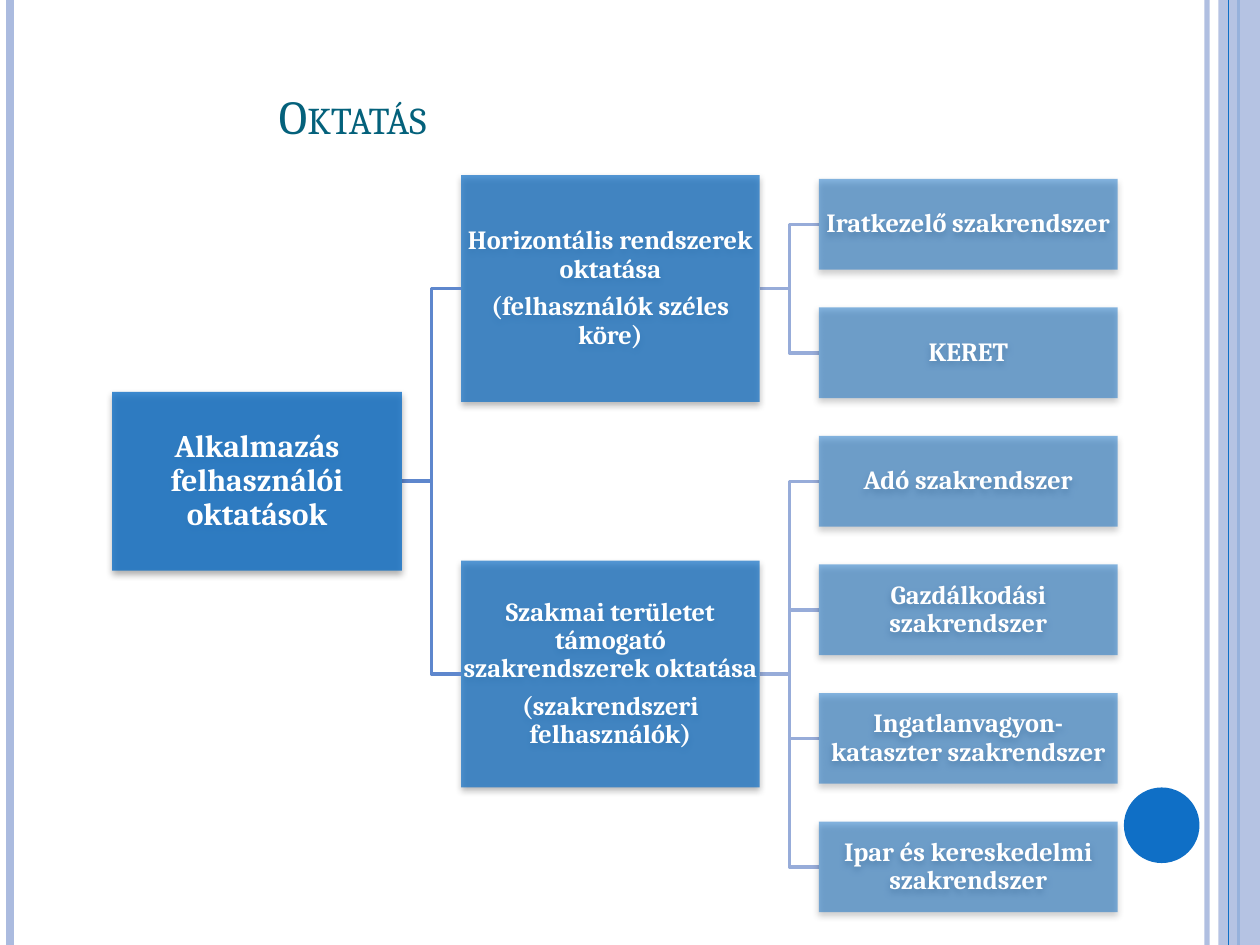
from lxml import etree
from pptx import Presentation
from pptx.dml.color import RGBColor
from pptx.enum.shapes import MSO_CONNECTOR, MSO_SHAPE
from pptx.enum.text import MSO_ANCHOR, PP_ALIGN
from pptx.oxml.ns import qn
from pptx.util import Inches, Pt

STRAIGHT = MSO_CONNECTOR.STRAIGHT
RECTANGLE, OVAL = MSO_SHAPE.RECTANGLE, MSO_SHAPE.OVAL
MIDDLE, CENTER = MSO_ANCHOR.MIDDLE, PP_ALIGN.CENTER

BLUE = RGBColor(0x0F, 0x6F, 0xC6)
PALE_BLUE = RGBColor(0xAB, 0xBB, 0xDF)
BRANCH_LINE = RGBColor(0x5E, 0x87, 0xCD)
LEAF_LINE = RGBColor(0x97, 0xAC, 0xD9)
TEAL = RGBColor(0x04, 0x61, 0x7B)
WHITE = RGBColor(0xFF, 0xFF, 0xFF)
FONT = "Cambria"

ROOT = "Alkalmazás felhasználói oktatások"
BRANCHES = [
    (["Horizontális rendszerek oktatása", "(felhasználók széles köre)"],
     ["Iratkezelő szakrendszer", "KERET"]),
    (["Szakmai területet támogató szakrendszerek oktatása",
      "(szakrendszeri felhasználók)"],
     ["Adó szakrendszer", "Gazdálkodási szakrendszer",
      "Ingatlanvagyon- kataszter szakrendszer",
      "Ipar és kereskedelmi szakrendszer"]),
]


def set_alpha(properties, percent):
    color = next(properties.iter(qn("a:srgbClr")))
    etree.SubElement(color, qn("a:alpha"), val=str(percent * 1000))


def add_shadow(shape):
    shape.shadow.inherit = False
    effects = shape._element.spPr.find(qn("a:effectLst"))
    shadow = etree.SubElement(
        effects, qn("a:outerShdw"), blurRad=str(Pt(4)), dist=str(Pt(2)),
        dir="5400000", rotWithShape="0")
    color = etree.SubElement(shadow, qn("a:srgbClr"), val="000000")
    etree.SubElement(color, qn("a:alpha"), val="40000")


def write(shape, texts, size, color, bold=True, margin=0.01):
    """Fill the shape with centred paragraphs of one style."""
    frame = shape.text_frame
    frame.word_wrap = True
    frame.vertical_anchor = MIDDLE
    frame.margin_left = frame.margin_right = Inches(margin)
    frame.margin_top = frame.margin_bottom = Inches(margin)
    for index, text in enumerate(texts):
        paragraph = frame.add_paragraph() if index else frame.paragraphs[0]
        paragraph.text = text
        paragraph.alignment = CENTER
        font = paragraph.font
        font.name, font.size, font.bold = FONT, Pt(size), bold
        font.color.rgb = color
    return frame


def add_filled(slide, kind, left, top, width, height, alpha=100, color=BLUE):
    shape = slide.shapes.add_shape(
        kind, Inches(left), Inches(top), Inches(width), Inches(height))
    shape.shadow.inherit = False
    shape.fill.solid()
    shape.fill.fore_color.rgb = color
    shape.line.fill.background()
    if alpha < 100:
        set_alpha(shape._element.spPr, alpha)
    return shape


def add_rule(slide, x, height, color, width, alpha=100):
    rule = slide.shapes.add_connector(
        STRAIGHT, Inches(x), 0, Inches(x), Inches(height))
    rule.line.color.rgb = color
    rule.line.width = Pt(width)
    properties = rule._element.spPr
    if alpha < 100:
        set_alpha(properties, alpha)
    etree.SubElement(properties, qn("a:effectLst"))


def add_frame(slide, height):
    """Draw the vertical bands at both slide edges and the plain disc."""
    add_rule(slide, 9.58, height, PALE_BLUE, 3, alpha=93)
    add_rule(slide, 0.08, height, PALE_BLUE, 4.5)
    add_rule(slide, 9.83, height, BLUE, 1.5)
    add_filled(slide, RECTANGLE, 9.67, 0, 0.33, height, 87, PALE_BLUE)
    add_rule(slide, 9.75, height, BLUE, 0.75)
    add_filled(slide, OVAL, 8.92, height - 1.25, 0.6, 0.6)


def add_title(slide, left, top, width, height):
    title = slide.shapes.add_textbox(
        Inches(left), Inches(top), Inches(width), Inches(height))
    frame = write(title, ["Oktatás"], 27, TEAL, bold=False, margin=0.05)
    frame.paragraphs[0].runs[0]._r.get_or_add_rPr().set("cap", "small")


def add_node(slide, left, middle, width, height, texts, size, alpha):
    node = add_filled(slide, RECTANGLE, left, middle - height / 2, width, height, alpha)
    add_shadow(node)
    for paragraph in write(node, texts, size, WHITE).paragraphs:
        paragraph.line_spacing = 0.9
        paragraph.space_after = Pt(size * 0.35)


def add_elbow(slide, start_x, start_y, end_x, end_y, color):
    bend_x = (start_x + end_x) / 2
    builder = slide.shapes.build_freeform(
        Inches(start_x), Inches(start_y), scale=1.0)
    corners = [(bend_x, start_y), (bend_x, end_y), (end_x, end_y)]
    builder.add_line_segments(
        [(Inches(x), Inches(y)) for x, y in corners], close=False)
    elbow = builder.convert_to_shape()
    elbow.shadow.inherit = False
    elbow.fill.background()
    elbow.line.color.rgb = color
    elbow.line.width = Pt(2)


def add_tree(slide, left, top):
    """Place leaves at an even pitch and centre each parent on its children."""
    root_width, node_width, gap = 2.3, 2.37, 0.47
    leaf_height, pitch = 0.72, 1.02
    root_right = left + root_width
    branch_left = root_right + gap
    branch_right = branch_left + node_width
    leaf_left = branch_right + gap
    leaf_middle = top + leaf_height / 2
    branch_middles = []
    for texts, leaves in BRANCHES:
        middles = [leaf_middle + index * pitch for index in range(len(leaves))]
        leaf_middle = middles[-1] + pitch
        branch_middle = sum(middles) / len(middles)
        branch_middles.append(branch_middle)
        for leaf, middle in zip(leaves, middles):
            add_elbow(slide, branch_right, branch_middle, leaf_left, middle, LEAF_LINE)
            add_node(slide, leaf_left, middle, node_width, leaf_height, [leaf], 15, 50)
        add_node(slide, branch_left, branch_middle, node_width, 1.8, texts, 15, 70)
    root_middle = sum(branch_middles) / len(branch_middles)
    for middle in branch_middles:
        add_elbow(slide, root_right, root_middle, branch_left, middle, BRANCH_LINE)
    add_node(slide, left, root_middle, root_width, 1.42, [ROOT], 18, 80)


def main():
    presentation = Presentation()
    presentation.slide_width = Inches(10)
    presentation.slide_height = Inches(7.5)
    slide = presentation.slides.add_slide(presentation.slide_layouts[6])
    add_frame(slide, 7.5)
    add_title(slide, -0.12, 0.29, 5.84, 1.25)
    add_tree(slide, 0.89, 1.42)
    presentation.save("out.pptx")


if __name__ == "__main__":
    main()
